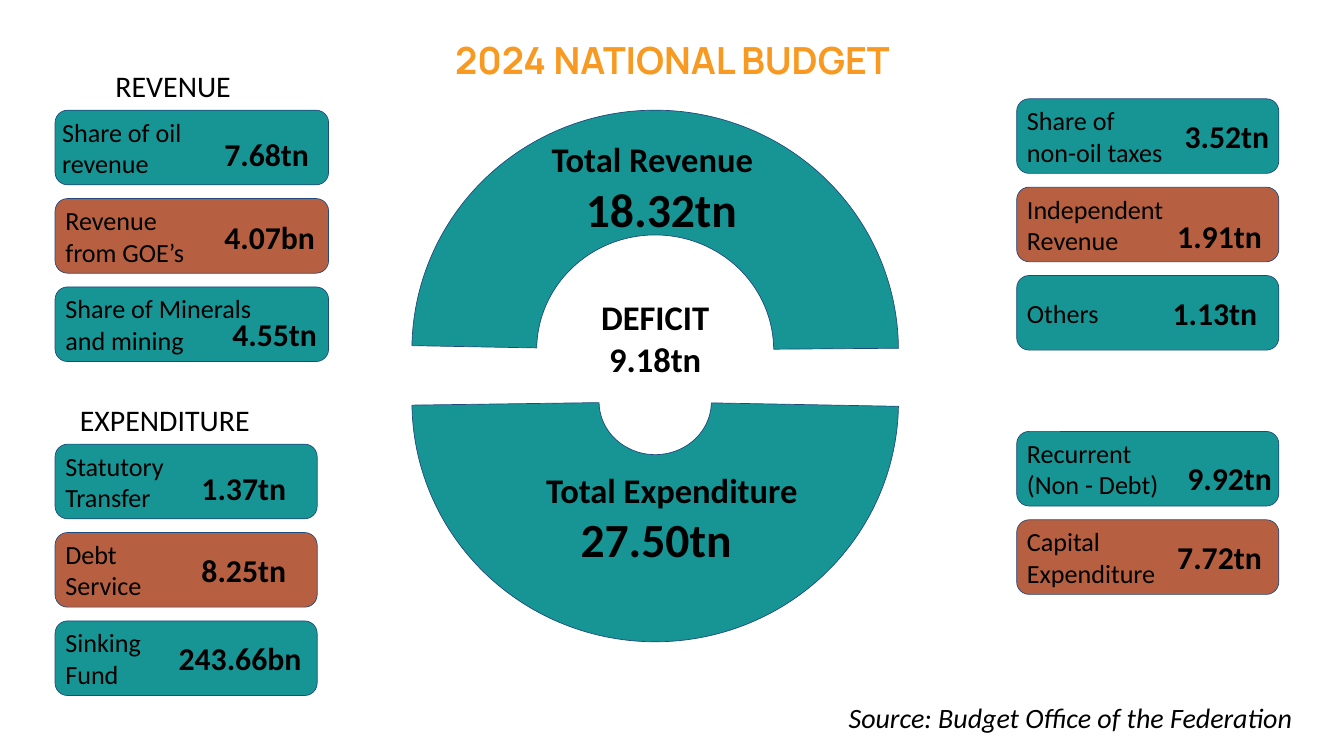
from dataclasses import dataclass

import pptx
import pptx.dml.color
import pptx.enum.shapes
import pptx.enum.text
import pptx.util

Inches = pptx.util.Inches
Pt = pptx.util.Pt
RGBColor = pptx.dml.color.RGBColor
Shape = pptx.enum.shapes.MSO_SHAPE
Align = pptx.enum.text.PP_ALIGN
Anchor = pptx.enum.text.MSO_ANCHOR

TEAL = RGBColor(0x17, 0x95, 0x95)
RUST = RGBColor(0xB7, 0x60, 0x41)
NAVY = RGBColor(0x1F, 0x49, 0x7D)
ORANGE = RGBColor(0xF8, 0x99, 0x21)
BLACK = RGBColor(0, 0, 0)
FILLS = (TEAL, RUST, TEAL)
PITCH = 1.315


@dataclass(frozen=True)
class Card:
    lines: tuple[str, ...]
    value: str
    left: float
    top: float
    pad: float = 0.1


@dataclass(frozen=True)
class Stack:
    left: float
    top: float
    width: float
    cards: tuple[Card, ...]


@dataclass(frozen=True)
class Label:
    lines: tuple[str, ...]
    box: tuple[float, float, float, float]
    size: int
    bold: bool = False
    slant: bool = False
    align: Align = Align.LEFT
    color: RGBColor = BLACK
    font: str = "Calibri"
    space: float = 1.0


@dataclass(frozen=True)
class Arc:
    top: float
    turn: int
    adjust: tuple[float, float, float]


STACKS = (
    Stack(0.82, 1.64, 4.07, (
        Card(("Share of oil", "revenue"), "7.68tn", 3.24, 1.91, 0.05),
        Card(("Revenue", "from GOE’s"), "4.07bn", 3.24, 3.14),
        Card(("Share of Minerals", "and mining"), "4.55tn", 3.36, 4.58),
    )),
    Stack(0.82, 6.61, 3.9, (
        Card(("Statutory", "Transfer"), "1.37tn", 2.9, 6.88),
        Card(("Debt", "Service"), "8.25tn", 2.9, 8.09),
        Card(("Sinking", "Fund"), "243.66bn", 2.56, 9.4),
    )),
    Stack(15.13, 1.47, 3.9, (
        Card(("Share of", "non-oil taxes"), "3.52tn", 17.53, 1.64),
        Card(("Independent", "Revenue"), "1.91tn", 17.42, 3.13),
        Card(("Others",), "1.13tn", 17.35, 4.27),
    )),
    Stack(15.13, 6.42, 3.9, (
        Card(("Recurrent", "(Non - Debt)"), "9.92tn", 17.57, 6.73),
        Card(("Capital", "Expenditure"), "7.72tn", 17.42, 7.9),
    )),
)

ARCS = (
    Arc(1.64, 0, (108.63, 215.74, 0.26)),
    Arc(2.41, 180, (108.63, 215.54, 0.39)),
)

LABELS = (
    Label(("2024 NATIONAL BUDGET",), (4.83, 0.32, 10.35, 0.88), 40, bold=True,
          align=Align.CENTER, color=ORANGE, font="Manrope", space=1.2),
    Label(("REVENUE",), (1.62, 0.9, 2.31, 0.74), 32),
    Label(("EXPENDITURE",), (1.09, 5.87, 3.28, 0.74), 32),
    Label(("Total Revenue",), (8.11, 1.96, 3.28, 0.82), 37, bold=True),
    Label(("18.32tn",), (8.62, 2.58, 3.28, 1.06), 51, bold=True),
    Label(("DEFICIT", "9.18tn"), (8.11, 4.31, 3.28, 1.45), 37, bold=True,
          align=Align.CENTER),
    Label(("Total Expenditure",), (8.03, 6.88, 4.93, 0.82), 37, bold=True),
    Label(("27.50tn",), (8.54, 7.49, 3.28, 1.06), 51, bold=True),
    Label(("Source: Budget Office of the Federation",),
          (12.53, 10.32, 7.4, 0.71), 30, slant=True),
)


def write(shape, label: Label, pad: float = 0.1) -> None:
    frame = shape.text_frame
    frame.word_wrap = True
    frame.margin_left = Inches(pad)
    frame.margin_right = frame.margin_top = frame.margin_bottom = Inches(0.1)
    frame.text = "\n".join(label.lines)
    for para in frame.paragraphs:
        para.alignment = label.align
        para.line_spacing = label.space
        para.font.name = label.font
        para.font.size = Pt(label.size)
        para.font.bold = label.bold
        para.font.italic = label.slant
        para.font.color.rgb = label.color


def place(slide, label: Label) -> None:
    box = slide.shapes.add_textbox(*map(Inches, label.box))
    write(box, label)


def block(slide, kind: Shape, box: tuple[float, ...], fill: RGBColor):
    shape = slide.shapes.add_shape(kind, *map(Inches, box))
    shape.shadow.inherit = False
    shape.fill.solid()
    shape.fill.fore_color.rgb = fill
    shape.line.color.rgb = NAVY
    shape.line.width = Pt(0.75)
    return shape


def draw_arc(slide, arc: Arc) -> None:
    shape = block(slide, Shape.BLOCK_ARC, (6.13, arc.top, 7.24, 7.14), TEAL)
    shape.rotation = arc.turn
    for index, value in enumerate(arc.adjust):
        shape.adjustments[index] = value


def draw_stack(slide, stack: Stack) -> None:
    for row, (card, fill) in enumerate(zip(stack.cards, FILLS)):
        box = (stack.left, stack.top + row * PITCH, stack.width, 1.11)
        shape = block(slide, Shape.ROUNDED_RECTANGLE, box, fill)
        write(shape, Label(card.lines, box, 28), card.pad)
        shape.text_frame.vertical_anchor = Anchor.MIDDLE
        spot = (card.left, card.top, 2.3, 0.77)
        place(slide, Label((card.value,), spot, 34, bold=True))


def main() -> None:
    deck = pptx.Presentation()
    deck.slide_width = Inches(20)
    deck.slide_height = Inches(11.25)
    slide = deck.slides.add_slide(deck.slide_layouts[6])
    for arc in ARCS:
        draw_arc(slide, arc)
    for stack in STACKS:
        draw_stack(slide, stack)
    for label in LABELS:
        place(slide, label)
    deck.save("out.pptx")


if __name__ == "__main__":
    main()
